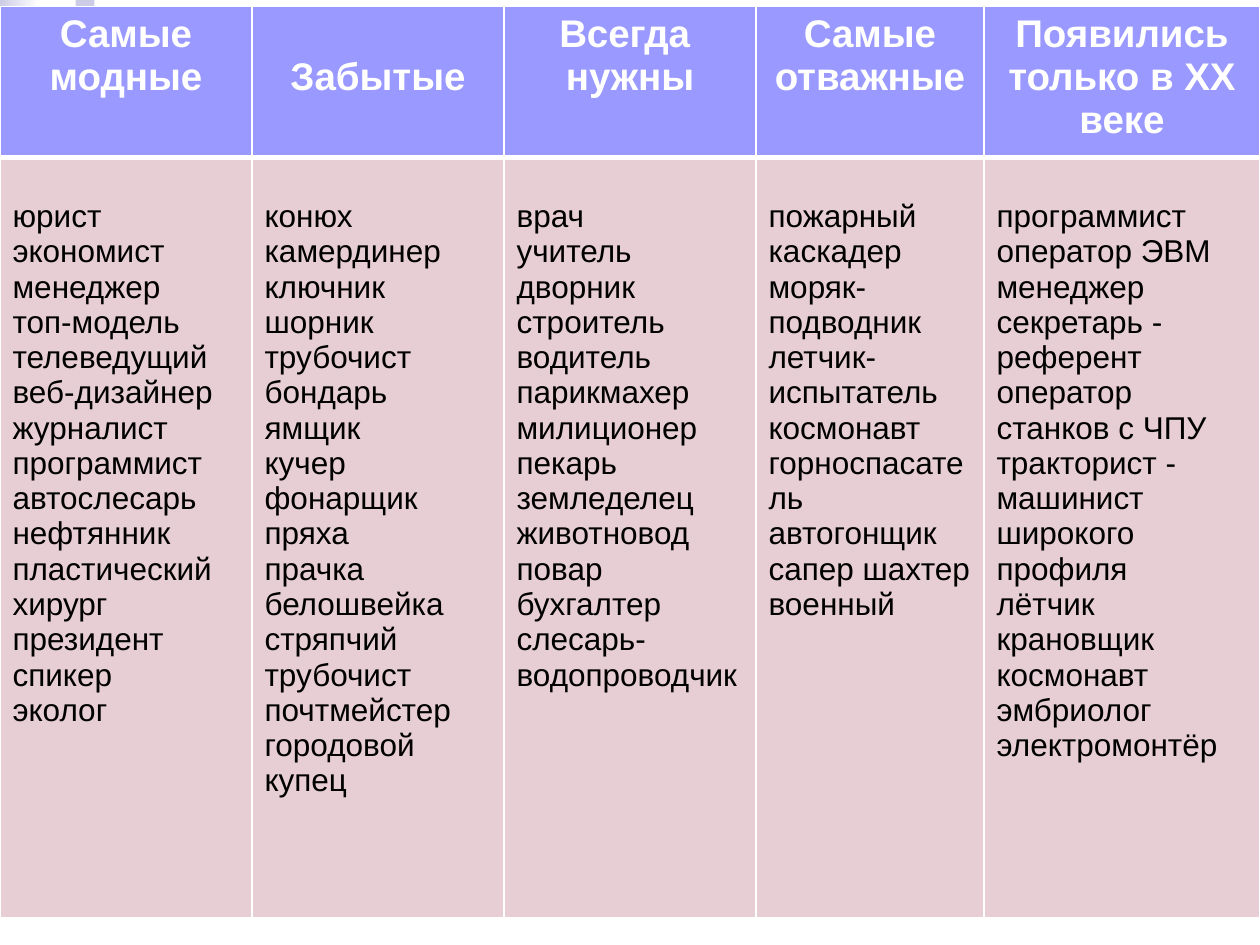
"""Build a slide with a table of professions in five groups."""
import dataclasses
import typing

import lxml.etree
import pptx
import pptx.dml.color
import pptx.enum.shapes
import pptx.enum.text
import pptx.oxml.ns
import pptx.util

Pt = pptx.util.Pt

COLORS: dict[str, str] = {
    "white": "FFFFFF",
    "black": "000000",
    "header": "9999FF",
    "body": "E6CED4",
    "navy": "00007D",
    "pale": "CCCCE6",
    "violet": "9999CC",
}


@dataclasses.dataclass(frozen=True)
class Block:
    left: float
    top: float
    width: float
    height: float
    color: str
    fades: bool = False


@dataclasses.dataclass(frozen=True)
class Group:
    width: float
    heading: tuple[str, ...]
    jobs: tuple[str, ...]
    heading_offset: float = 0


@dataclasses.dataclass(frozen=True)
class CellStyle:
    fill: str
    text: str
    size: float
    bold: bool
    align: typing.Any
    borders: dict[str, float]


SQUARE = 10.8
HEADING_LINE = 24.6
JOB_LINE = 20.1
CELL_MARGIN = 3.6

BLOCKS = [
    Block(0, 0, 22.3, 41.8, "pale", fades=True),
    Block(32.4, 10.8, 687.6, 21.6, "navy", fades=True),
    *(
        Block(left, top, SQUARE, SQUARE, color)
        for left, top, color in (
            (32.4, 10.8, "pale"),
            (43.2, 0, "pale"),
            (43.2, 10.8, "violet"),
            (21.6, 21.6, "pale"),
            (10.1, 10.8, "navy"),
            (32.4, 21.6, "violet"),
            (21.6, 32.4, "violet"),
        )
    ),
]

GROUPS = [
    Group(144, ("Самые модные",), (
        "юрист", "экономист", "менеджер", "топ-модель", "телеведущий",
        "веб-дизайнер журналист", "программист", "автослесарь", "нефтянник",
        "пластический хирург", "президент", "спикер", "эколог",
    )),
    Group(144, ("Забытые",), (
        "конюх камердинер", "ключник", "шорник трубочист", "бондарь", "ямщик",
        "кучер", "фонарщик", "пряха", "прачка", "белошвейка", "стряпчий",
        "трубочист почтмейстер", "городовой", "купец",
    ), heading_offset=HEADING_LINE),
    Group(144, ("Всегда ", "нужны"), (
        "врач", "учитель", "дворник строитель", "водитель",
        "парикмахер милиционер", "пекарь земледелец животновод повар",
        "бухгалтер", "слесарь-водопроводчик",
    )),
    Group(130.3, ("Самые отважные",), (
        "пожарный каскадер", "моряк-подводник", "летчик-испытатель",
        "космонавт", "горноспасатель автогонщик", "сапер шахтер военный",
    )),
    Group(157.7, ("Появились только в XX веке",), (
        "программист оператор ЭВМ", "менеджер", "секретарь - референт",
        "оператор станков с ЧПУ", "тракторист - машинист широкого профиля",
        "лётчик", "крановщик", "космонавт", "эмбриолог", "электромонтёр",
    )),
]

HEADING_STYLE = CellStyle(
    "header", "white", 22, True, pptx.enum.text.PP_ALIGN.CENTER,
    {"lnL": 1, "lnR": 1, "lnT": 1, "lnB": 3},
)
JOBS_STYLE = CellStyle(
    "body", "black", 18, False, pptx.enum.text.PP_ALIGN.LEFT,
    {"lnL": 1, "lnR": 1, "lnT": 3, "lnB": 1},
)


def rgb(name: str) -> pptx.dml.color.RGBColor:
    """Return a named colour."""
    return pptx.dml.color.RGBColor.from_string(COLORS[name])


def draw_block(page: typing.Any, block: Block) -> None:
    """Draw one decorative rectangle."""
    shape = page.shapes.add_shape(
        pptx.enum.shapes.MSO_SHAPE.RECTANGLE,
        Pt(block.left), Pt(block.top), Pt(block.width), Pt(block.height),
    )
    shape.shadow.inherit = False
    shape.line.fill.background()
    if block.fades:
        shape.fill.gradient()
        shape.fill.gradient_angle = 0
        for stop, color in zip(shape.fill.gradient_stops, (block.color, "white")):
            stop.color.rgb = rgb(color)
    else:
        shape.fill.solid()
        shape.fill.fore_color.rgb = rgb(block.color)


def add_border(cell: typing.Any, side: str, width: float) -> None:
    """Add a white border to one side of a cell."""
    qn = pptx.oxml.ns.qn
    properties = cell._tc.get_or_add_tcPr()
    line = lxml.etree.SubElement(properties, qn(f"a:{side}"), w=str(Pt(width)))
    fill = lxml.etree.SubElement(line, qn("a:solidFill"))
    lxml.etree.SubElement(fill, qn("a:srgbClr"), val=COLORS["white"])


def fill_cell(
    cell: typing.Any, lines: tuple[str, ...], style: CellStyle, offset: float
) -> None:
    """Write and format one table cell."""
    for side, width in style.borders.items():
        add_border(cell, side, width)
    cell.fill.solid()
    cell.fill.fore_color.rgb = rgb(style.fill)
    cell.margin_top = Pt(CELL_MARGIN + offset)
    frame = cell.text_frame
    for index, line in enumerate(lines):
        para = frame.add_paragraph() if index else frame.paragraphs[0]
        para.alignment = style.align
        span = para.add_run()
        span.text = line
        span.font.name = "Arial"
        span.font.size = Pt(style.size)
        span.font.bold = style.bold
        span.font.color.rgb = rgb(style.text)


def draw_table(page: typing.Any, groups: list[Group]) -> None:
    """Draw the table with one column for each group."""
    box = page.shapes.add_table(2, len(groups), 0, Pt(3.6), Pt(720), Pt(520.6))
    table = box.table
    table.horz_banding = False
    for row, height in zip(table.rows, (86.4, 434.2)):
        row.height = Pt(height)
    for index, group in enumerate(groups):
        table.columns[index].width = Pt(group.width)
        fill_cell(table.cell(0, index), group.heading, HEADING_STYLE, group.heading_offset)
        fill_cell(table.cell(1, index), group.jobs, JOBS_STYLE, JOB_LINE)


def main() -> None:
    """Build and save the deck."""
    deck = pptx.Presentation()
    deck.slide_width, deck.slide_height = Pt(720), Pt(540)
    page = deck.slides.add_slide(deck.slide_layouts[6])
    for block in BLOCKS:
        draw_block(page, block)
    draw_table(page, GROUPS)
    deck.save("out.pptx")


if __name__ == "__main__":
    main()
